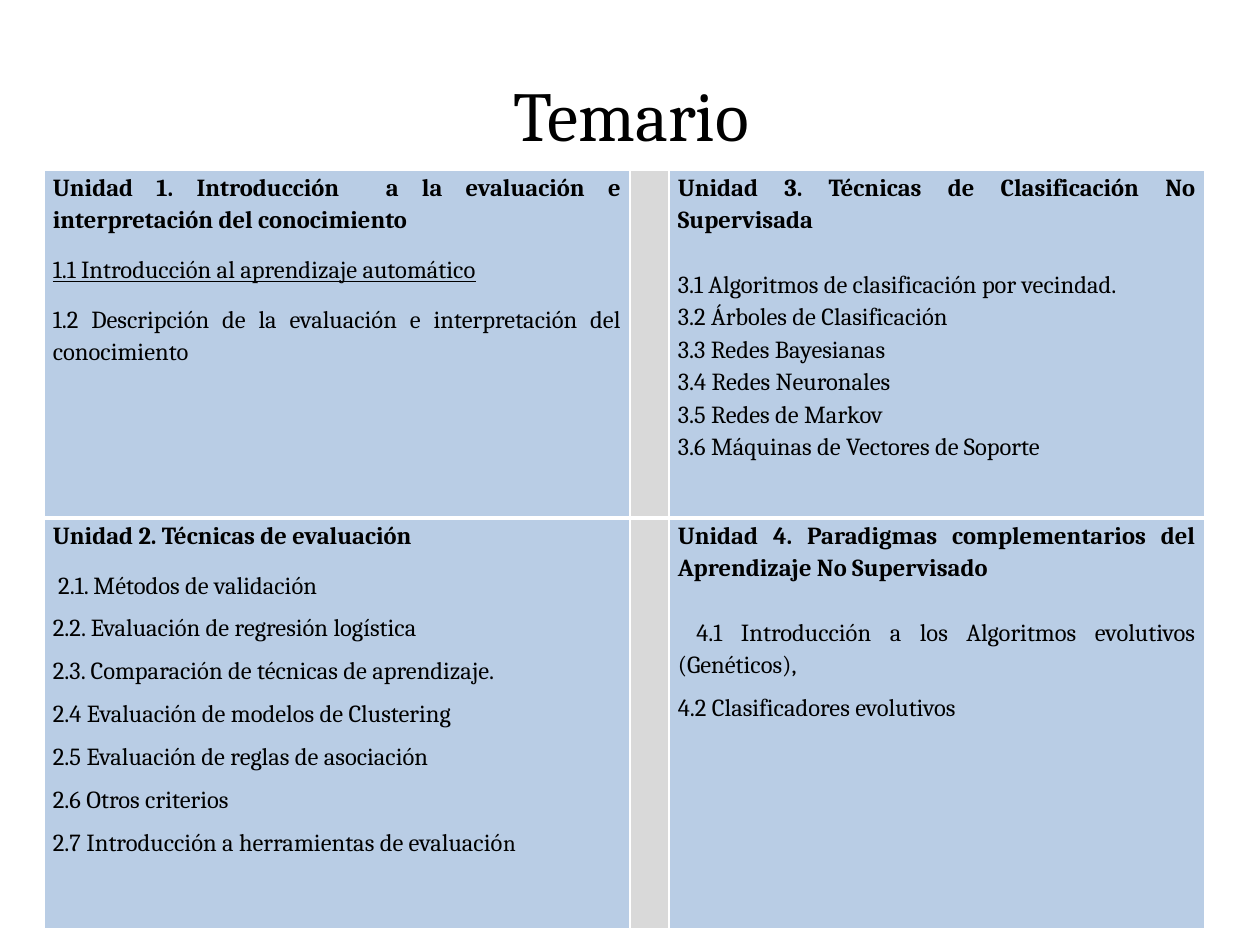
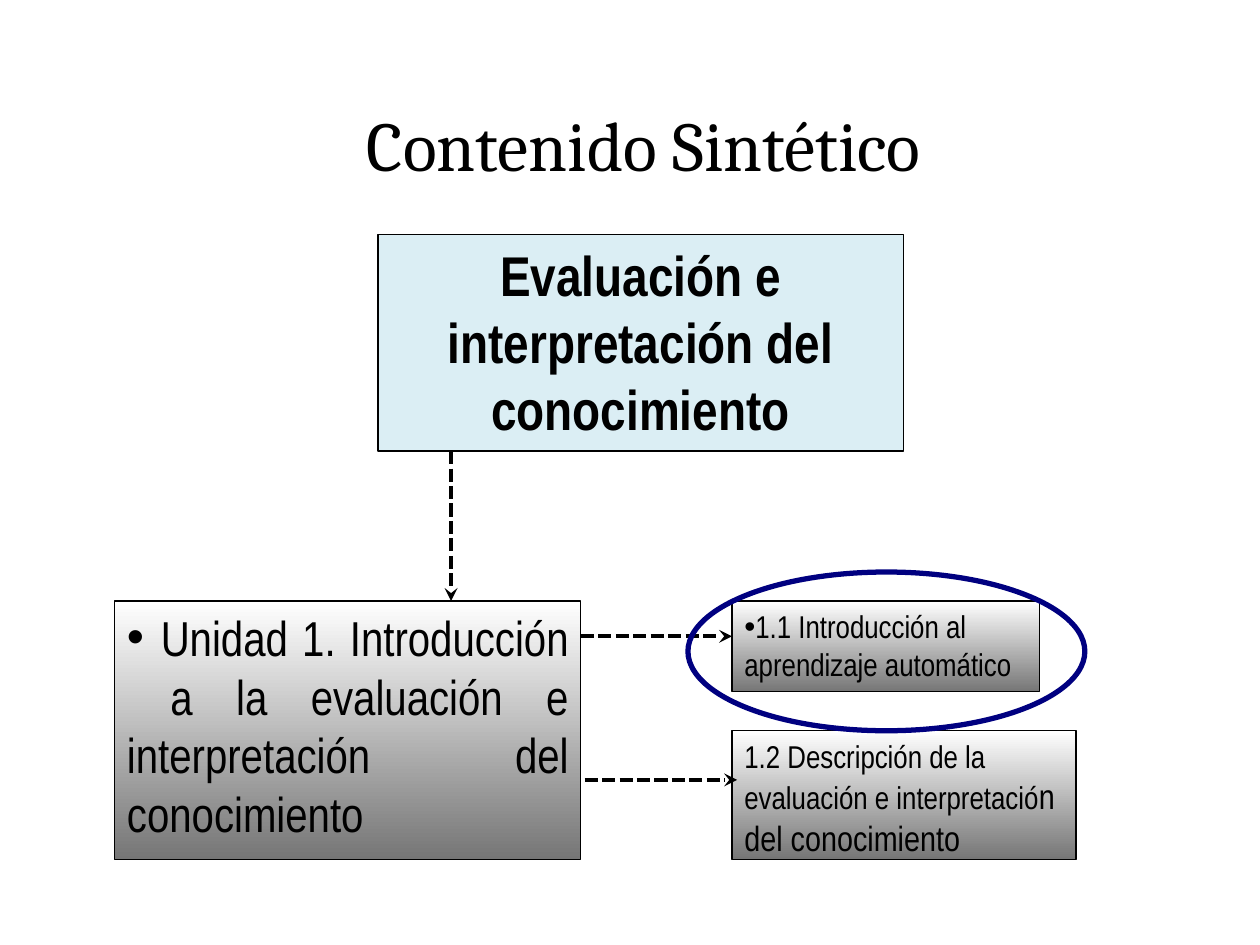
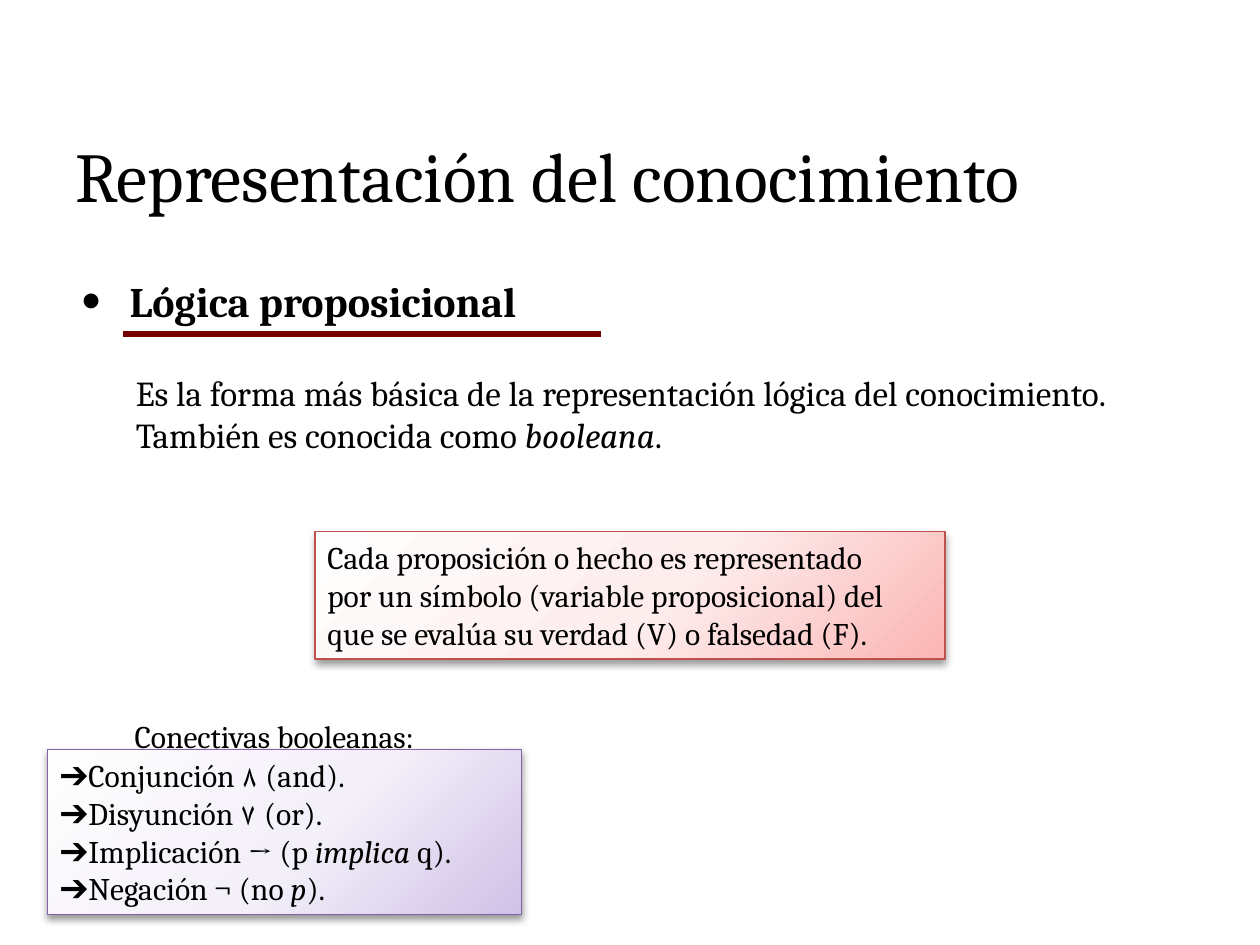
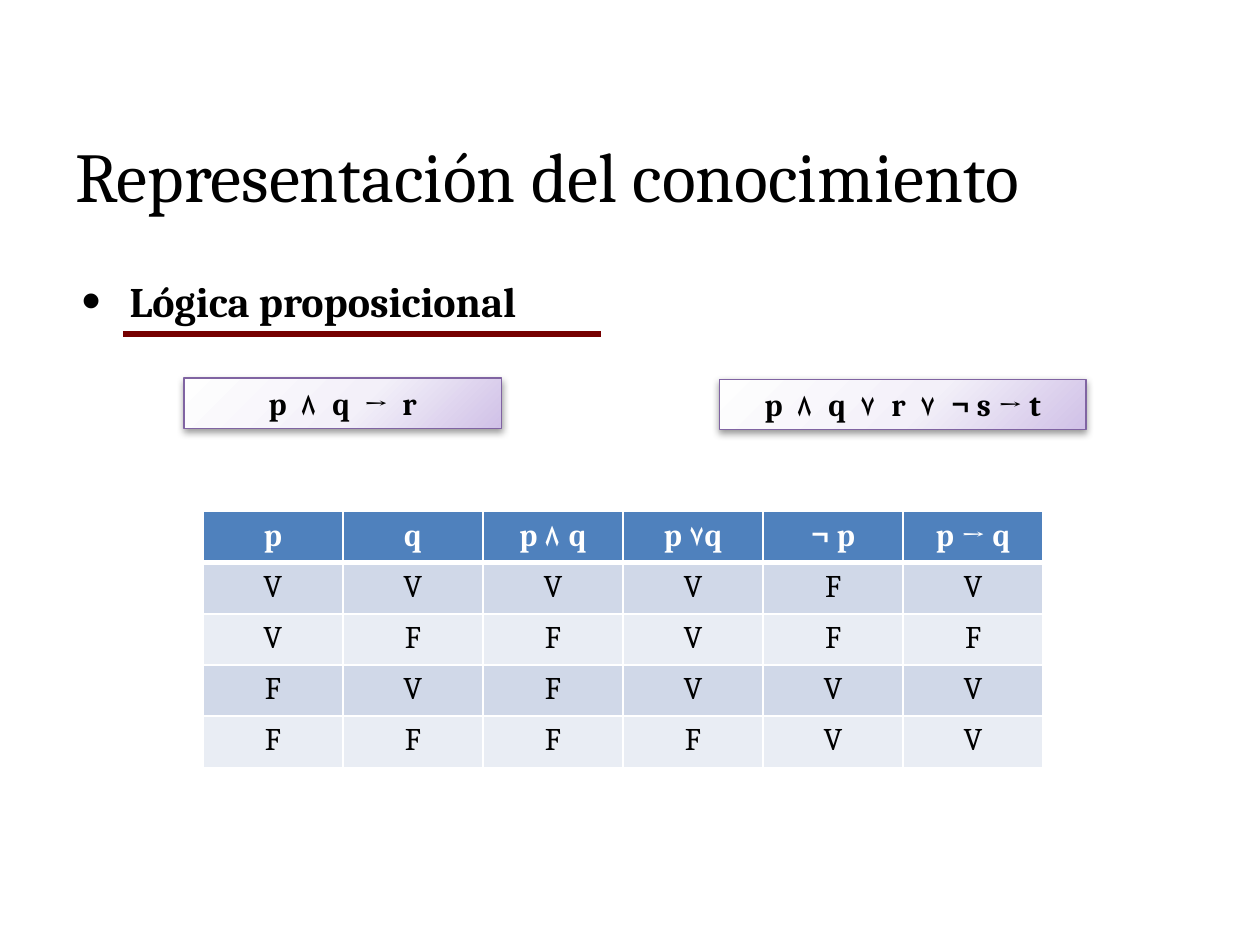
from dataclasses import dataclass

from lxml import etree
from pptx import Presentation
from pptx import util as u
from pptx.dml.color import RGBColor
from pptx.enum import shapes, text
from pptx.oxml import parse_xml
from pptx.oxml.ns import nsdecls, qn

COLORS = {
    "ink": "000000", "white": "FFFFFF", "rule": "760000", "ring": "000080",
    "unit": "B9CDE5", "gutter": "D9D9D9", "topic": "DBEEF4",
    "red": "C0504D", "purple": "8064A2",
    "head": "4F81BD", "band_dark": "D0D8E8", "band_light": "E9EDF4",
}
STEEL = [(0, "FFFFFF"), (100, "767676")]
ROSE = [(0, "FFFEFE"), (55, "FDEDED"), (100, "FBB5B4")]
LILAC = [(0, "FEFEFE"), (55, "F3F0F9"), (100, "D0C1E7")]
SERIF, NARROW = "Cambria", "Arial Narrow"
LEFT, CENTER, JUSTIFY = (text.PP_ALIGN.LEFT, text.PP_ALIGN.CENTER,
                         text.PP_ALIGN.JUSTIFY)
UNIT_1 = "Unidad 1. Introducción  a la evaluación e interpretación del conocimiento"


@dataclass
class Run:
    text: str
    size: float = 0
    font: str = ""
    bold: bool = False
    italic: bool = False
    underline: bool = False
    spacing: int = 0


@dataclass
class Para:
    runs: list
    align: object = LEFT
    line: float = 1.0
    after: float = 0
    bullet: int = 0
    indent: float = 0


def rgb(name):
    return RGBColor.from_string(COLORS[name])


def sub(parent, tag, **attrs):
    el = etree.SubElement(parent, qn(tag))
    for key, value in attrs.items():
        el.set(key, str(value))
    return el


def write(tf, paras, size, font=SERIF, color="ink", wrap=True):
    tf.word_wrap = wrap
    for i, para in enumerate(paras):
        p = tf.paragraphs[0] if i == 0 else tf.add_paragraph()
        p.alignment = para.align
        p.line_spacing = para.line
        p.space_after = u.Pt(para.after)
        if para.bullet:
            pPr = p._p.get_or_add_pPr()
            pPr.set("marL", str(u.Inches(para.indent)))
            pPr.set("indent", str(-u.Inches(para.indent)))
            sub(pPr, "a:buSzPct", val=para.bullet * 1000)
            sub(pPr, "a:buFont", typeface="Arial")
            sub(pPr, "a:buChar", char="•")
        for run in para.runs:
            r = p.add_run()
            r.text = run.text
            r.font.size = u.Pt(run.size or size)
            r.font.name = run.font or font
            r.font.bold = run.bold
            r.font.italic = run.italic
            r.font.underline = run.underline
            r.font.color.rgb = rgb(color)
            if run.spacing:
                r._r.get_or_add_rPr().set("spc", str(run.spacing))


def add_text(s, box, paras, size, wrap=True):
    sp = s.shapes.add_textbox(*map(u.Inches, box))
    sp.text_frame.vertical_anchor = text.MSO_ANCHOR.TOP
    write(sp.text_frame, paras, size, wrap=wrap)


def add_title(s, title, box, align=LEFT):
    add_text(s, box, [Para([Run(title)], align)], 40)


def add_box(s, box, line, width=0.75, kind=shapes.MSO_SHAPE.RECTANGLE, fill=None):
    sp = s.shapes.add_shape(kind, *map(u.Inches, box))
    sp.shadow.inherit = False
    sp.line.color.rgb = rgb(line)
    sp.line.width = u.Pt(width)
    if fill:
        sp.fill.solid()
        sp.fill.fore_color.rgb = rgb(fill)
    else:
        sp.fill.background()
    sp.text_frame.vertical_anchor = text.MSO_ANCHOR.TOP
    return sp


def set_gradient(sp, stops, radial=False):
    grad = parse_xml(f'<a:gradFill {nsdecls("a")} rotWithShape="1"/>')
    gs_lst = sub(grad, "a:gsLst")
    for pos, color in stops:
        sub(sub(gs_lst, "a:gs", pos=pos * 1000), "a:srgbClr", val=color)
    if radial:
        sub(sub(grad, "a:path", path="circle"), "a:fillToRect",
            l=-40000, t=-90000, r=140000, b=190000)
    else:
        sub(grad, "a:lin", ang=5400000, scaled=1)
    spPr = sp._element.spPr
    spPr.replace(spPr.find(qn("a:noFill")), grad)


def add_steel_box(s, box, paras, size):
    sp = add_box(s, box, "ink")
    set_gradient(sp, STEEL)
    write(sp.text_frame, paras, size, NARROW)


def add_callout(s, box, paras, stops, line):
    sp = add_box(s, box, line)
    set_gradient(sp, stops, radial=True)
    shadow = sub(sp._element.spPr.find(qn("a:effectLst")), "a:outerShdw",
                 blurRad=u.Pt(4.1), dist=u.Pt(2), dir=5400000, rotWithShape=0)
    sub(sub(shadow, "a:srgbClr", val=COLORS["ink"]), "a:alpha", val=40000)
    write(sp.text_frame, paras, 18)


def add_line(s, start, end, color, width, arrow=False):
    cx = s.shapes.add_connector(shapes.MSO_CONNECTOR.STRAIGHT,
                                *map(u.Inches, start + end))
    cx.line.color.rgb = rgb(color)
    cx.line.width = u.Pt(width)
    if arrow:
        ln = cx.line._get_or_add_ln()
        sub(ln, "a:prstDash", val="sysDash")
        sub(ln, "a:tailEnd", type="stealth")
    sub(cx._element.spPr, "a:effectLst")


def add_table(s, box, widths, heights):
    shape = s.shapes.add_table(len(heights), len(widths), *map(u.Inches, box))
    table = shape.table
    table.first_row = table.horz_banding = False
    for col, width in zip(table.columns, widths):
        col.width = u.Inches(width)
    for row, height in zip(table.rows, heights):
        row.height = u.Inches(height)
    return table


def style_cell(cell, fill, row):
    cell.fill.solid()
    cell.fill.fore_color.rgb = rgb(fill)
    tcPr = cell._tc.get_or_add_tcPr()
    widths = {"L": 1, "R": 1, "T": 3 if row == 1 else 1, "B": 3 if row == 0 else 1}
    for i, (side, width) in enumerate(widths.items()):
        ln = parse_xml(f'<a:ln{side} {nsdecls("a")} w="{u.Pt(width)}"/>')
        sub(sub(ln, "a:solidFill"), "a:srgbClr", val=COLORS["white"])
        tcPr.insert(i, ln)


def unit(heading, topics, align=JUSTIFY, heading_after=10.0, after=6.0):
    first = Para([Run(heading, bold=True)], align, 1.15, heading_after)
    return [first] + [Para([Run(t)], align, 1.15, after) for t in topics]


def syllabus_slide(s):
    add_title(s, "Temario", (0.51, 0.52, 9, 0.7), CENTER)
    unit_1 = unit(UNIT_1, [
        "1.1 Introducción al aprendizaje automático",
        "1.2 Descripción de la evaluación e interpretación del conocimiento"])
    unit_1[1].runs[0].underline = True
    unit_1[1].after = 10
    unit_2 = unit("Unidad 2. Técnicas de evaluación", [
        " 2.1. Métodos de validación",
        "2.2. Evaluación de regresión logística",
        "2.3. Comparación de técnicas de aprendizaje.",
        "2.4 Evaluación de modelos de Clustering",
        "2.5 Evaluación de reglas de asociación",
        "2.6 Otros criterios",
        "2.7 Introducción a herramientas de evaluació"], LEFT)
    unit_2[-1].runs.append(Run("n", 13))
    unit_3 = unit("Unidad 3. Técnicas de Clasificación No Supervisada", [
        "3.1 Algoritmos de clasificación por vecindad.",
        "3.2 Árboles de Clasificación",
        "3.3 Redes Bayesianas",
        "3.4 Redes Neuronales",
        "3.5 Redes de Markov",
        "3.6 Máquinas de Vectores de Soporte"], heading_after=18.5, after=0)
    unit_4 = unit(
        "Unidad 4. Paradigmas complementarios del Aprendizaje No Supervisado", [
            " 4.1 Introducción a los Algoritmos evolutivos (Genéticos),",
            "4.2 Clasificadores evolutivos"], heading_after=18.5)
    table = add_table(s, (0.35, 1.35, 9.21, 6.02), (4.65, 0.31, 4.25), (2.76, 3.26))
    for i, units in enumerate([(unit_1, None, unit_3), (unit_2, None, unit_4)]):
        for j, paras in enumerate(units):
            cell = table.cell(i, j)
            style_cell(cell, "unit" if paras else "gutter", i)
            cell.margin_left = cell.margin_right = u.Inches(0.07)
            cell.margin_top = cell.margin_bottom = 0
            if paras:
                write(cell.text_frame, paras, 14)


def content_slide(s):
    add_title(s, "Contenido Sintético", (0.61, 0.76, 9, 1), CENTER)
    topic = add_box(s, (3, 1.86, 4.17, 1.72), "ink", fill="topic")
    write(topic.text_frame, [Para(
        [Run("Evaluación e interpretación del conocimiento", bold=True)], CENTER)],
        32, NARROW)
    add_steel_box(s, (0.91, 4.77, 3.7, 2.05), [
        Para([Run(" ", font="Arial"), Run(UNIT_1)], JUSTIFY, bullet=100)], 28)
    add_steel_box(s, (5.81, 4.77, 2.44, 0.72), [
        Para([Run("1.1 Introducción al aprendizaje automático")], bullet=100)], 18)
    add_steel_box(s, (5.81, 5.8, 2.73, 1.02), [
        Para([Run("1.2 Descripción de la evaluación e interpretació"),
              Run("n del conocimiento", 20)])], 18)
    for start, end in [((3.58, 3.58), (3.58, 4.77)),
                       ((4.61, 5.05), (5.81, 5.05)),
                       ((4.64, 6.19), (5.85, 6.19))]:
        add_line(s, start, end, "ink", 2.5, arrow=True)
    add_box(s, (5.46, 4.54, 3.15, 1.26), "ring", 3, shapes.MSO_SHAPE.OVAL)


def add_logic_header(s):
    add_title(s, "Representación del conocimiento", (0.5, 1, 9, 1.18))
    add_text(s, (0.55, 1.94, 8.74, 4.7), [
        Para([Run("Lógica proposicional", bold=True)],
             line=1.5, bullet=130, indent=0.38)], 24)
    add_line(s, (0.98, 2.65), (4.77, 2.65), "rule", 3)


def connectives_slide(s):
    add_logic_header(s)
    add_text(s, (0.98, 2.9, 8.03, 1.11), [
        Para([Run("Es la forma más básica de la representación lógica "
                  "del conocimiento.")], JUSTIFY),
        Para([Run("También es conocida como "), Run("booleana", italic=True),
              Run(".")], JUSTIFY)], 20)
    add_callout(s, (2.5, 4.22, 5, 1.01), [Para([Run(t)]) for t in (
        "Cada proposición o hecho es representado",
        "por un símbolo (variable proposicional) del",
        "que se evalúa su verdad (V) o falsedad (F).")], ROSE, "red")
    add_text(s, (0.97, 5.64, 2.67, 0.4), [Para([Run("Conectivas booleanas:")])],
             18, wrap=False)
    add_callout(s, (0.38, 5.95, 3.76, 1.31), [
        Para([Run("➔Conjunción ٨ (and).")]),
        Para([Run("➔Disyunción ٧ (or).")]),
        Para([Run("➔Implicación → (p "), Run("implica ", italic=True), Run("q).")]),
        Para([Run("➔Negación ¬ (no "), Run("p", italic=True), Run(").")]),
    ], LILAC, "purple")


def truth_table_slide(s):
    add_logic_header(s)
    add_callout(s, (5.71, 3.01, 2.91, 0.4), [
        Para([Run("p ٨ q ٧ r ٧ ", bold=True, spacing=200),
              Run("¬ s → t", bold=True)], CENTER)], LILAC, "purple")
    add_callout(s, (1.46, 3, 2.52, 0.4), [
        Para([Run("p ٨ q → r", bold=True, spacing=200)], CENTER)], LILAC, "purple")
    rows = [("p", "q", "p ٨ q", "p ٧q", "¬ p", "p → q"),
            "VVVVFV", "VFFVFF", "FVFVVV", "FFFFVV"]
    table = add_table(s, (1.61, 4.06, 6.67, 2.03),
                      [6.67 / 6] * 6, [2.03 / 5] * 5)
    for i, row in enumerate(rows):
        head = i == 0
        fill = "head" if head else "band_dark" if i % 2 else "band_light"
        for j, value in enumerate(row):
            cell = table.cell(i, j)
            style_cell(cell, fill, i)
            write(cell.text_frame, [Para([Run(value, bold=head)], CENTER)], 18,
                  color="white" if head else "ink")


def main():
    prs = Presentation()
    prs.slide_width, prs.slide_height = u.Inches(10), u.Inches(7.5)
    for build in (syllabus_slide, content_slide, connectives_slide,
                  truth_table_slide):
        build(prs.slides.add_slide(prs.slide_layouts[6]))
    prs.save("out.pptx")


if __name__ == "__main__":
    main()
